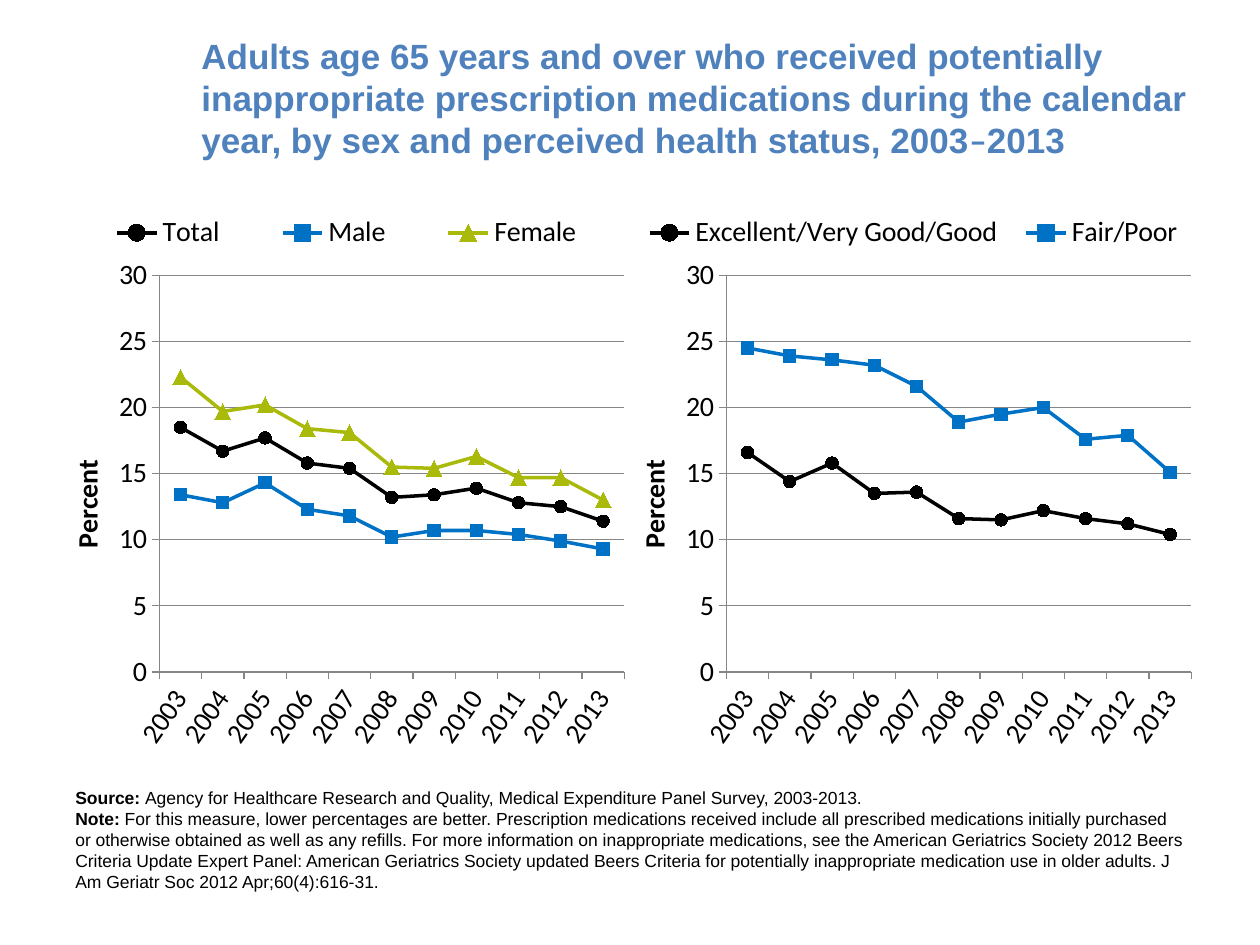
from lxml.etree import SubElement
from pptx import Presentation
from pptx.chart.data import CategoryChartData
from pptx.dml.color import RGBColor
from pptx.enum.chart import XL_CHART_TYPE, XL_LEGEND_POSITION, XL_MARKER_STYLE, XL_TICK_MARK
from pptx.enum.text import MSO_ANCHOR
from pptx.oxml.ns import qn
from pptx.util import Pt

BLACK = RGBColor(0x00, 0x00, 0x00)
BLUE = RGBColor(0x00, 0x72, 0xC6)
GREEN = RGBColor(0xAA, 0xBA, 0x0A)
TITLE_BLUE = RGBColor(0x4F, 0x81, 0xBD)
GRAY = RGBColor(0x86, 0x86, 0x86)

YEARS = [str(year) for year in range(2003, 2014)]
STYLES = [
    (BLACK, XL_MARKER_STYLE.CIRCLE, 7),
    (BLUE, XL_MARKER_STYLE.SQUARE, 7),
    (GREEN, XL_MARKER_STYLE.TRIANGLE, 9),
]
BY_SEX = {
    "Total": [18.5, 16.7, 17.7, 15.8, 15.4, 13.2, 13.4, 13.9, 12.8, 12.5, 11.4],
    "Male": [13.4, 12.8, 14.3, 12.3, 11.8, 10.2, 10.7, 10.7, 10.4, 9.9, 9.3],
    "Female": [22.3, 19.7, 20.2, 18.4, 18.1, 15.5, 15.4, 16.3, 14.7, 14.7, 13],
}
BY_HEALTH = {
    "Excellent/Very Good/Good": [16.6, 14.4, 15.8, 13.5, 13.6, 11.6, 11.5, 12.2, 11.6, 11.2, 10.4],
    "Fair/Poor": [24.5, 23.9, 23.6, 23.2, 21.6, 18.9, 19.5, 20, 17.6, 17.9, 15.1],
}
TITLE = [[
    ("Adults age 65 years and over who received potentially inappropriate prescription "
     "medications during the calendar year, by sex and perceived health status, 2003", True, "Arial"),
    ("–", True, "Calibri"),
    ("2013", True, "Arial"),
]]
FOOTNOTE = [
    [
        ("Source: ", True, "Arial"),
        ("Agency for Healthcare Research and Quality, Medical Expenditure Panel Survey, 2003-2013.",
         False, "Arial"),
    ],
    [
        ("Note:", True, "Arial"),
        (" For this measure, lower percentages are better. Prescription medications received include "
         "all prescribed medications initially purchased or otherwise obtained as well as any refills. "
         "For more information on inappropriate medications, see the American Geriatrics Society 2012 "
         "Beers Criteria Update Expert Panel: American Geriatrics Society updated Beers Criteria for "
         "potentially inappropriate medication use in older adults. J Am Geriatr Soc 2012 "
         "Apr;60(4):616-31.", False, "Arial"),
    ],
]


def set_font(font, size, name="Calibri", color=BLACK, bold=False):
    font.size = Pt(size)
    font.name = name
    font.bold = bold
    font.color.rgb = color


def add_text(slide, paragraphs, left, top, width, height, size, color=BLACK, anchor=MSO_ANCHOR.TOP):
    frame = slide.shapes.add_textbox(Pt(left), Pt(top), Pt(width), Pt(height)).text_frame
    frame.word_wrap = True
    frame.vertical_anchor = anchor
    for index, runs in enumerate(paragraphs):
        paragraph = frame.add_paragraph() if index else frame.paragraphs[0]
        for text, bold, name in runs:
            run = paragraph.add_run()
            run.text = text
            set_font(run.font, size, name, color, bold)


def set_layout(parent, position, inner=False):
    layout = parent.find(qn("c:layout"))
    if layout is None:
        layout = SubElement(parent, qn("c:layout"))
        parent.remove(layout)
        parent.insert(1 if parent.tag == qn("c:legend") else 0, layout)
    manual = SubElement(layout, qn("c:manualLayout"))
    settings = [("layoutTarget", "inner")] if inner else []
    settings += [("xMode", "edge"), ("yMode", "edge"), *zip("xywh", position)]
    for tag, value in settings:
        SubElement(manual, qn(f"c:{tag}")).set("val", str(value))


def format_axis(axis):
    axis.major_tick_mark = XL_TICK_MARK.OUTSIDE
    axis.minor_tick_mark = XL_TICK_MARK.NONE
    axis.format.line.color.rgb = GRAY
    set_font(axis.tick_labels.font, 16)


def format_axes(chart):
    categories, values = chart.category_axis, chart.value_axis
    format_axis(categories)
    format_axis(values)
    categories._element.find(qn("c:txPr")).find(qn("a:bodyPr")).set("rot", "-3300000")
    values.minimum_scale, values.maximum_scale, values.major_unit = 0, 30, 5
    values.has_major_gridlines = True
    values.major_gridlines.format.line.color.rgb = GRAY
    values.tick_labels.number_format = "0"
    values.tick_labels.number_format_is_linked = False
    title = values.axis_title.text_frame
    title.text = "Percent"
    set_font(title.paragraphs[0].runs[0].font, 16, bold=True)


def format_series(series, color, marker, size):
    series.smooth = False
    series.format.line.color.rgb = color
    series.format.line.width = Pt(2)
    series.marker.style = marker
    series.marker.size = size
    series.marker.format.fill.solid()
    series.marker.format.fill.fore_color.rgb = color
    series.marker.format.line.color.rgb = color


def add_line_chart(slide, values_by_name, left):
    data = CategoryChartData(number_format="0.0")
    data.categories = YEARS
    for name, values in values_by_name.items():
        data.add_series(name, values)
    chart = slide.shapes.add_chart(
        XL_CHART_TYPE.LINE_MARKERS, Pt(left), Pt(115.2), Pt(324), Pt(324), data).chart
    set_font(chart.font, 10, "Arial")
    chart.has_title = False
    chart.has_legend = True
    chart.legend.position = XL_LEGEND_POSITION.TOP
    chart.legend.include_in_layout = False
    set_font(chart.legend.font, 16)
    set_layout(chart.legend._element, (0, 0, 1, 0.11))
    plot = chart.plots[0]
    plot.vary_by_categories = False
    set_layout(plot._element.getparent(), (0.17, 0.13, 0.82, 0.7), inner=True)
    format_axes(chart)
    for series, style in zip(plot.series, STYLES):
        format_series(series, *style)


def main():
    presentation = Presentation()
    presentation.slide_width, presentation.slide_height = Pt(720), Pt(540)
    slide = presentation.slides.add_slide(presentation.slide_layouts[6])
    add_text(slide, TITLE, 108, 21.6, 581.76, 68.4, 20, TITLE_BLUE, MSO_ANCHOR.MIDDLE)
    add_line_chart(slide, BY_SEX, 36)
    add_line_chart(slide, BY_HEALTH, 360)
    add_text(slide, FOOTNOTE, 36, 446.4, 648, 67.68, 10)
    presentation.save("out.pptx")


if __name__ == "__main__":
    main()
